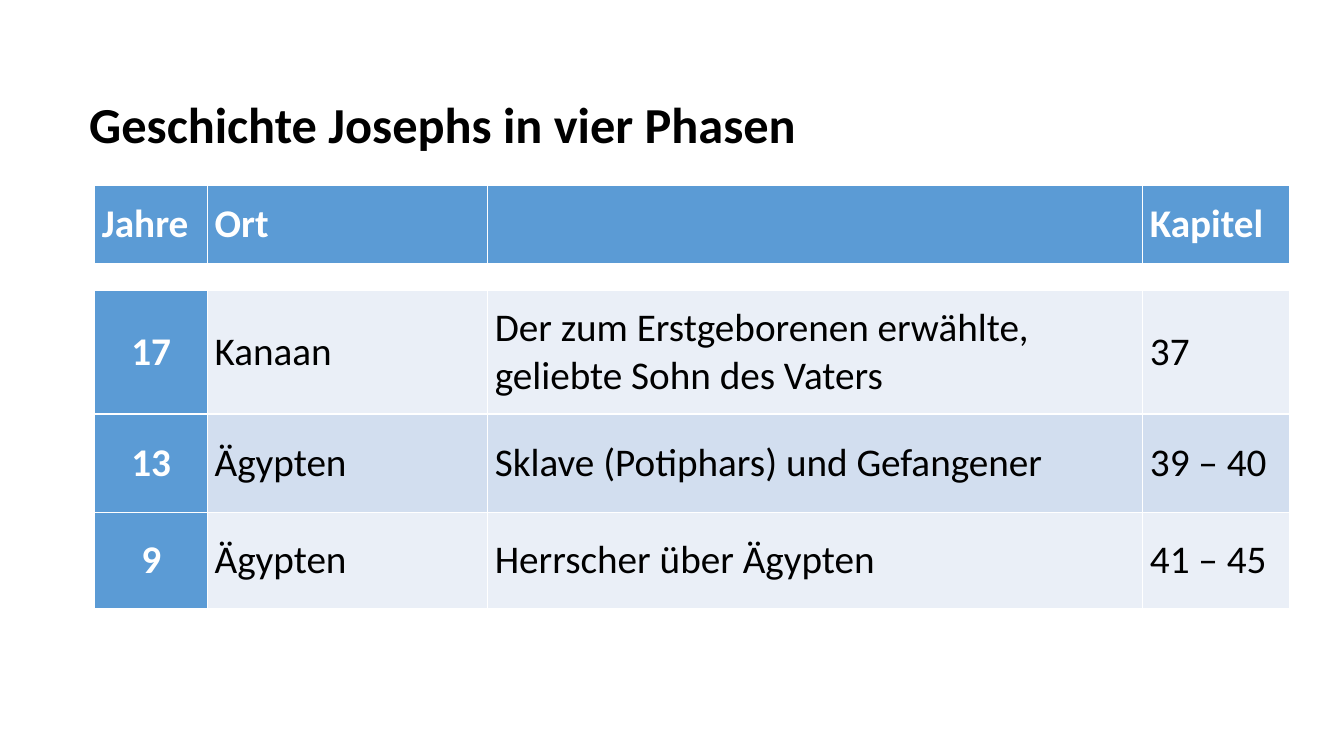
from lxml.etree import SubElement
from pptx import Presentation
from pptx.dml.color import RGBColor
from pptx.enum.text import MSO_ANCHOR as Anchor, MSO_AUTO_SIZE as AutoSize, PP_ALIGN as Align
from pptx.oxml.ns import qn
from pptx.util import Cm, Pt

BLUE, PALE, MEDIUM = "5B9BD5", "EAEFF7", "D2DEEF"
WHITE, BLACK = "FFFFFF", "000000"

COLUMN_WIDTHS = [2.84, 7.06, 16.51, 3.71]
HEADER_HEIGHT, GAP_HEIGHT = 1.98, 0.66
HEADINGS = ["Jahre", "Ort", "", "Kapitel"]
PHASES = [
    (3.12, ["17", "Kanaan", "Der zum Erstgeborenen erwählte, geliebte Sohn des Vaters", "37"]),
    (2.49, ["13", "Ägypten", "Sklave (Potiphars) und Gefangener", "39 – 40"]),
    (2.41, ["9", "Ägypten", "Herrscher über Ägypten", "41 – 45"]),
]


def rgb(color):
    return RGBColor.from_string(color)


def set_all(target, values):
    for name, value in values.items():
        setattr(target, name, value)


def write(para, text, size, color, bold):
    span = para.add_run()
    span.text = text
    set_all(span.font, {"name": "Calibri", "size": Pt(size), "bold": bold})
    span.font.color.rgb = rgb(color)


def add_title(page, text):
    box = page.shapes.add_textbox(Cm(2), Cm(2.21), Cm(18.52), Cm(1.8))
    set_all(box.text_frame, {"word_wrap": False, "auto_size": AutoSize.SHAPE_TO_FIT_TEXT})
    write(box.text_frame.paragraphs[0], text, 36, BLACK, True)


def add_borders(cell, color):
    """Draw 1 pt lines on all four sides; call before the cell is filled."""
    properties = cell._tc.get_or_add_tcPr()
    for side in ("a:lnL", "a:lnR", "a:lnT", "a:lnB"):
        line = SubElement(properties, qn(side), w=str(Pt(1)))
        SubElement(SubElement(line, qn("a:solidFill")), qn("a:srgbClr"), val=color)


def format_cell(cell, fill):
    add_borders(cell, WHITE)
    cell.fill.solid()
    cell.fill.fore_color.rgb = rgb(fill)
    set_all(cell, {
        "margin_left": Cm(0.18), "margin_right": Cm(0.18),
        "margin_top": 0, "margin_bottom": 0,
        "vertical_anchor": Anchor.MIDDLE,
    })


def fill_cell(cell, text, fill, color, bold, align=Align.LEFT):
    format_cell(cell, fill)
    para = cell.text_frame.paragraphs[0]
    para.alignment = align
    if text:
        write(para, text, 28, color, bold)


def fill_gap_cell(cell):
    """Leave the cell empty, with a small text size so that its row stays low."""
    format_cell(cell, WHITE)
    SubElement(cell.text_frame.paragraphs[0]._p, qn("a:endParaRPr"), sz="800")


def add_phase_table(page):
    heights = [HEADER_HEIGHT, GAP_HEIGHT] + [height for height, _ in PHASES]
    frame = page.shapes.add_table(
        len(heights), len(COLUMN_WIDTHS), Cm(2.39), Cm(4.67),
        Cm(sum(COLUMN_WIDTHS)), Cm(sum(heights)))
    table = frame.table
    set_all(table, {"first_col": True, "horz_banding": False})
    for column, width in zip(table.columns, COLUMN_WIDTHS):
        column.width = Cm(width)
    for row, height in zip(table.rows, heights):
        row.height = Cm(height)

    for index, heading in enumerate(HEADINGS):
        fill_cell(table.cell(0, index), heading, BLUE, WHITE, True)
        fill_gap_cell(table.cell(1, index))
    for number, (_, texts) in enumerate(PHASES):
        cells = table.rows[number + 2].cells
        band = MEDIUM if number % 2 else PALE
        fill_cell(cells[0], texts[0], BLUE, WHITE, True, Align.CENTER)
        for index, text in enumerate(texts[1:], 1):
            fill_cell(cells[index], text, band, BLACK, False)


def main():
    deck = Presentation()
    set_all(deck, {"slide_width": Cm(33.87), "slide_height": Cm(19.05)})
    page = deck.slides.add_slide(deck.slide_layouts[6])
    add_title(page, "Geschichte Josephs in vier Phasen")
    add_phase_table(page)
    deck.save("out.pptx")


if __name__ == "__main__":
    main()
